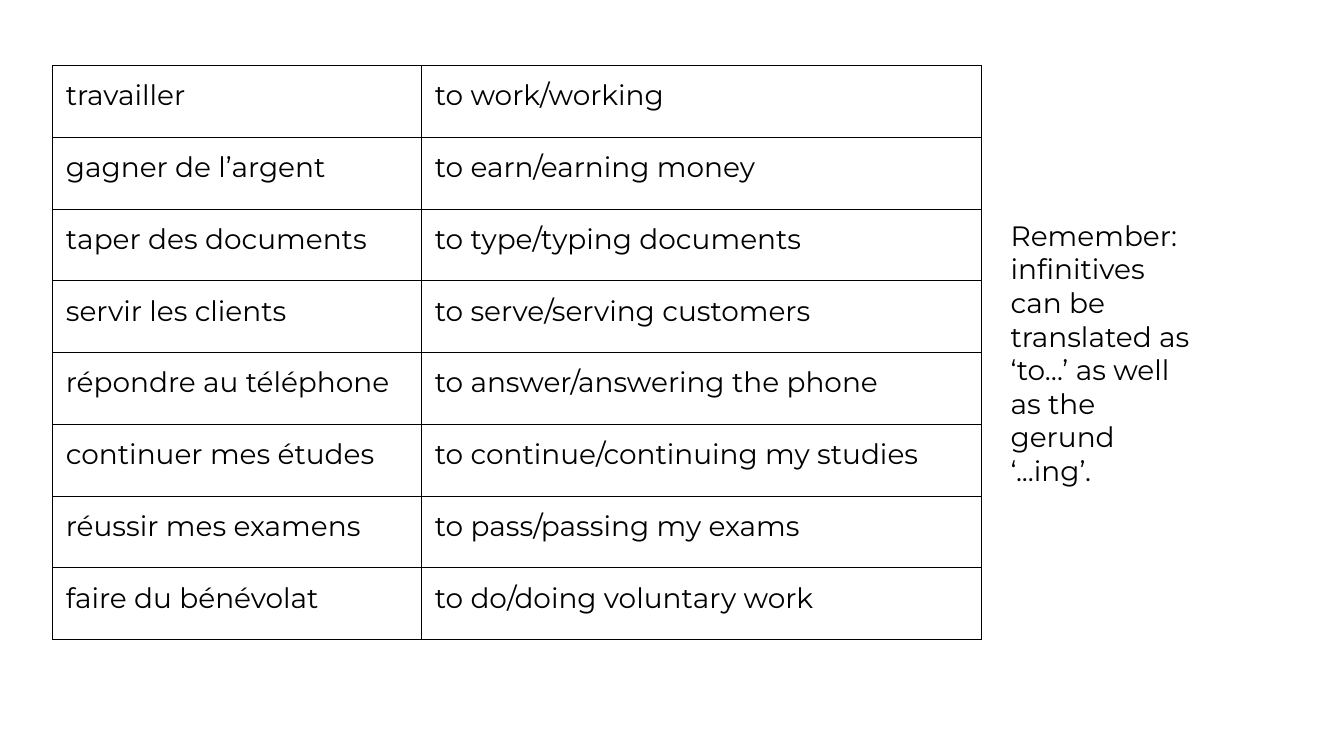
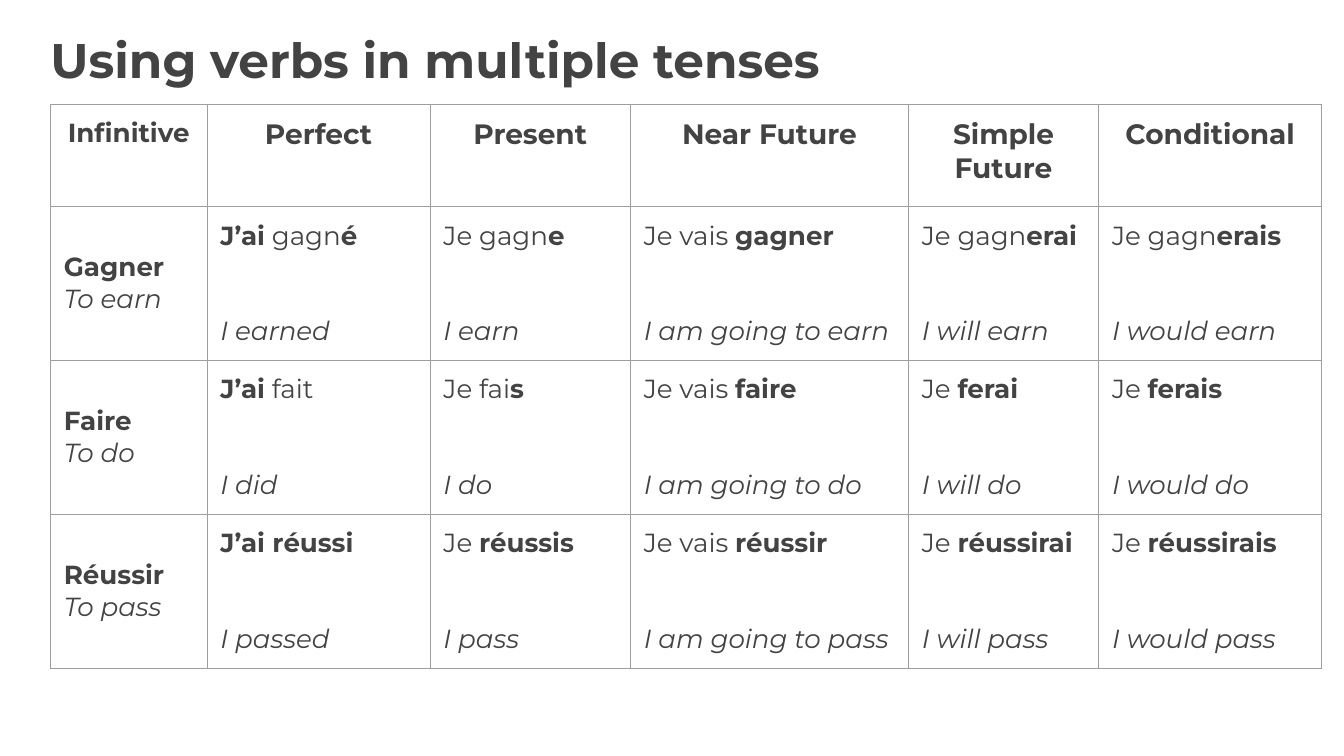
"""Build two French verb slides: a vocabulary list and a table of tenses."""
from lxml import etree
from pptx import Presentation
from pptx import util as u
from pptx.dml import color
from pptx.enum import text
from pptx.oxml import ns

COLOURS = {"black": "000000", "grey": "434343", "rule": "9E9E9E", "white": "FFFFFF"}
FONT = "Montserrat"
CELL_INSET = 14.4
TRANSLATION_GAP = 68.25

VOCABULARY = [
    ("travailler", "to work/working"),
    ("gagner de l’argent", "to earn/earning money"),
    ("taper des documents", "to type/typing documents"),
    ("servir les clients", "to serve/serving customers"),
    ("répondre au téléphone", "to answer/answering the phone"),
    ("continuer mes études", "to continue/continuing my studies"),
    ("réussir mes examens", "to pass/passing my exams"),
    ("faire du bénévolat", "to do/doing voluntary work"),
]
REMINDER = "Remember: infinitives can be translated as ‘to…’ as well as the gerund ‘...ing’."

TENSES_TITLE = "*Using verbs in multiple tenses*"
TENSES = ["Infinitive", "Perfect", "Present", "Near Future", "Simple Future", "Conditional"]
VERBS = [
    [("*Gagner*", "To earn"), ("*J’ai* gagn*é*", "I earned"), ("Je gagn*e*", "I earn"),
     ("Je vais *gagner*", "I am going to earn"), ("Je gagn*erai*", "I will earn"),
     ("Je gagn*erais*", "I would earn")],
    [("*Faire*", "To do"), ("*J’ai* fait", "I did"), ("Je fai*s*", "I do"),
     ("Je vais *faire*", "I am going to do"), ("Je *ferai*", "I will do"),
     ("Je *ferais*", "I would do")],
    [("*Réussir*", "To pass"), ("*J’ai réussi*", "I passed"), ("Je *réussis*", "I pass"),
     ("Je vais *réussir*", "I am going to pass"), ("Je *réussirai*", "I will pass"),
     ("Je *réussirais*", "I would pass")],
]

VOCABULARY_TABLE = {"left": 56.2, "top": 70, "columns": [395.3, 599.8], "rows": [76.9] * 8}
TENSES_TABLE = {"left": 54, "top": 111.6, "rows": [109.4] + [165] * 3,
                "columns": [167.8, 239, 214.6, 298, 203.8, 239]}


def set_values(target, values):
    for name, value in values.items():
        setattr(target, name, value)


def write(paragraph, marked_text, size, colour, italic=False, **layout):
    """Write a paragraph, with the parts between asterisks in bold."""
    set_values(paragraph, layout)
    for index, part in enumerate(marked_text.split("*")):
        if part:
            run = paragraph.add_run()
            run.text = part
            set_values(run.font, {"name": FONT, "size": u.Pt(size),
                                  "bold": index % 2 == 1, "italic": italic})
            run.font.color.rgb = color.RGBColor.from_string(COLOURS[colour])


def add_text(slide, box, inset, marked_text, size, colour, **layout):
    frame = slide.shapes.add_textbox(*map(u.Pt, box)).text_frame
    set_values(frame, {"word_wrap": True, **margins(inset)})
    write(frame.paragraphs[0], marked_text, size, colour, **layout)


def margins(inset):
    return {f"margin_{side}": u.Pt(inset) for side in ("left", "top", "right", "bottom")}


def add_borders(cell, colour):
    properties = cell._tc.get_or_add_tcPr()
    for side in ("lnL", "lnR", "lnT", "lnB"):
        line = etree.SubElement(properties, ns.qn(f"a:{side}"), w=str(u.Pt(0.75)))
        fill = etree.SubElement(line, ns.qn("a:solidFill"))
        etree.SubElement(fill, ns.qn("a:srgbClr"), val=COLOURS[colour])


def add_grid(slide, layout, border):
    columns, rows = layout["columns"], layout["rows"]
    box = map(u.Pt, (layout["left"], layout["top"], sum(columns), sum(rows)))
    table = slide.shapes.add_table(len(rows), len(columns), *box).table
    set_values(table, {"first_row": False, "horz_banding": False})
    for column, width in zip(table.columns, columns):
        column.width = u.Pt(width)
    for row, height in zip(table.rows, rows):
        row.height = u.Pt(height)
    for cell in table.iter_cells():
        set_values(cell, margins(CELL_INSET))
        add_borders(cell, border)
        cell.fill.solid()
        cell.fill.fore_color.rgb = color.RGBColor.from_string(COLOURS["white"])
    return table


def build_vocabulary(slide):
    table = add_grid(slide, VOCABULARY_TABLE, "black")
    for row, phrases in enumerate(VOCABULARY):
        for column, phrase in enumerate(phrases):
            write(table.cell(row, column).text_frame.paragraphs[0], phrase, 30, "black")
    add_text(slide, (1075.7, 226.8, 207.4, 306.7), 7.2, REMINDER, 30, "black")


def build_tenses(slide):
    table = add_grid(slide, TENSES_TABLE, "rule")
    for column, tense in enumerate(TENSES):
        write(table.cell(0, column).text_frame.paragraphs[0], f"*{tense}*",
              30 if column else 28, "grey", alignment=text.PP_ALIGN.CENTER)
    for row, forms in enumerate(VERBS, start=1):
        for column, (french, english) in enumerate(forms):
            cell = table.cell(row, column)
            if column == 0:
                cell.vertical_anchor = text.MSO_ANCHOR.MIDDLE
            write(cell.text_frame.paragraphs[0], french, 28, "grey")
            write(cell.text_frame.add_paragraph(), english, 28, "grey", italic=True,
                  space_before=u.Pt(TRANSLATION_GAP if column else 0))
    add_text(slide, (54, 22.3, 1295.3, 128.2), 0, TENSES_TITLE, 52, "grey", line_spacing=1.15)


def main():
    presentation = Presentation()
    set_values(presentation, {"slide_width": u.Pt(1440), "slide_height": u.Pt(810)})
    for build in (build_vocabulary, build_tenses):
        build(presentation.slides.add_slide(presentation.slide_layouts[6]))
    presentation.save("out.pptx")


if __name__ == "__main__":
    main()
